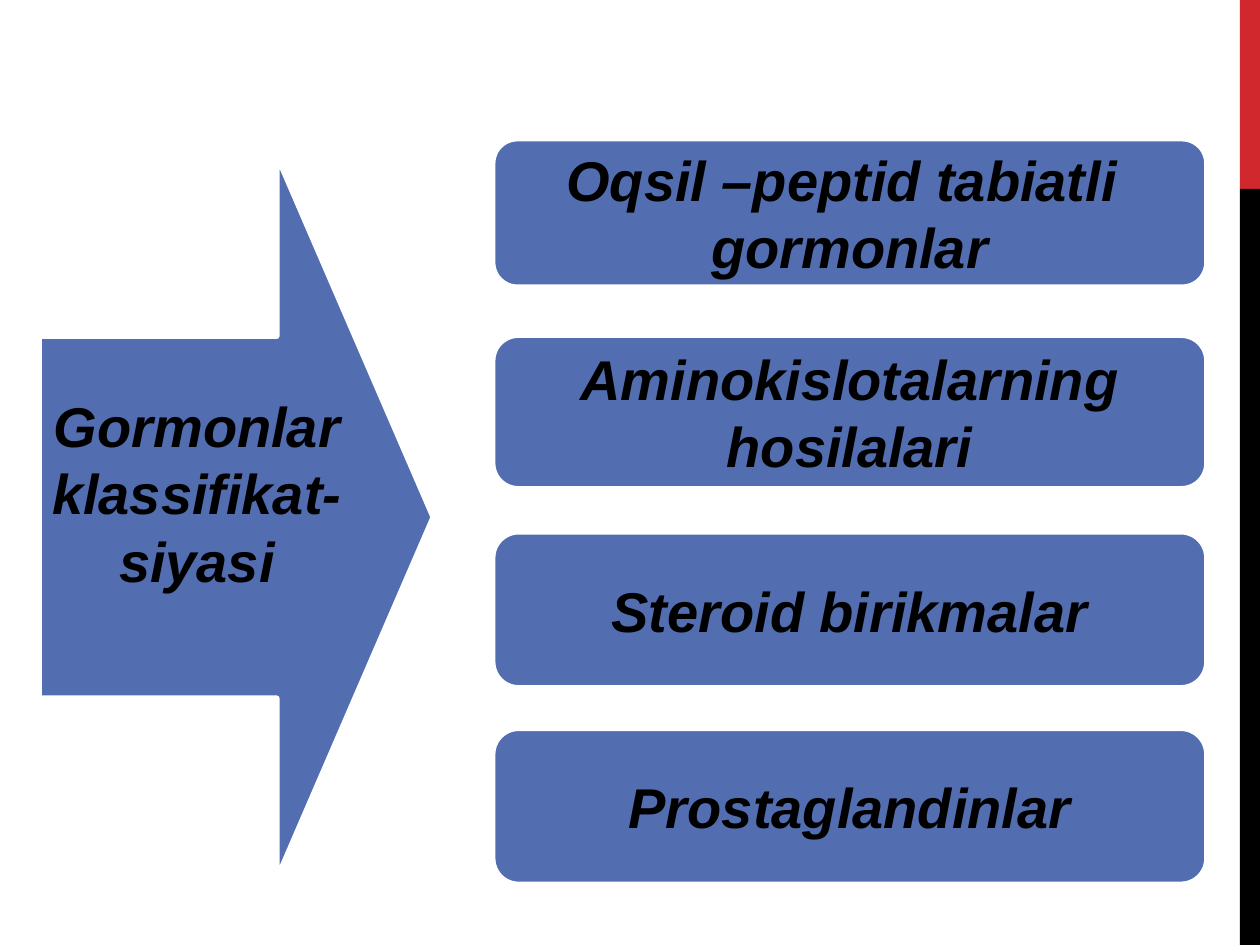
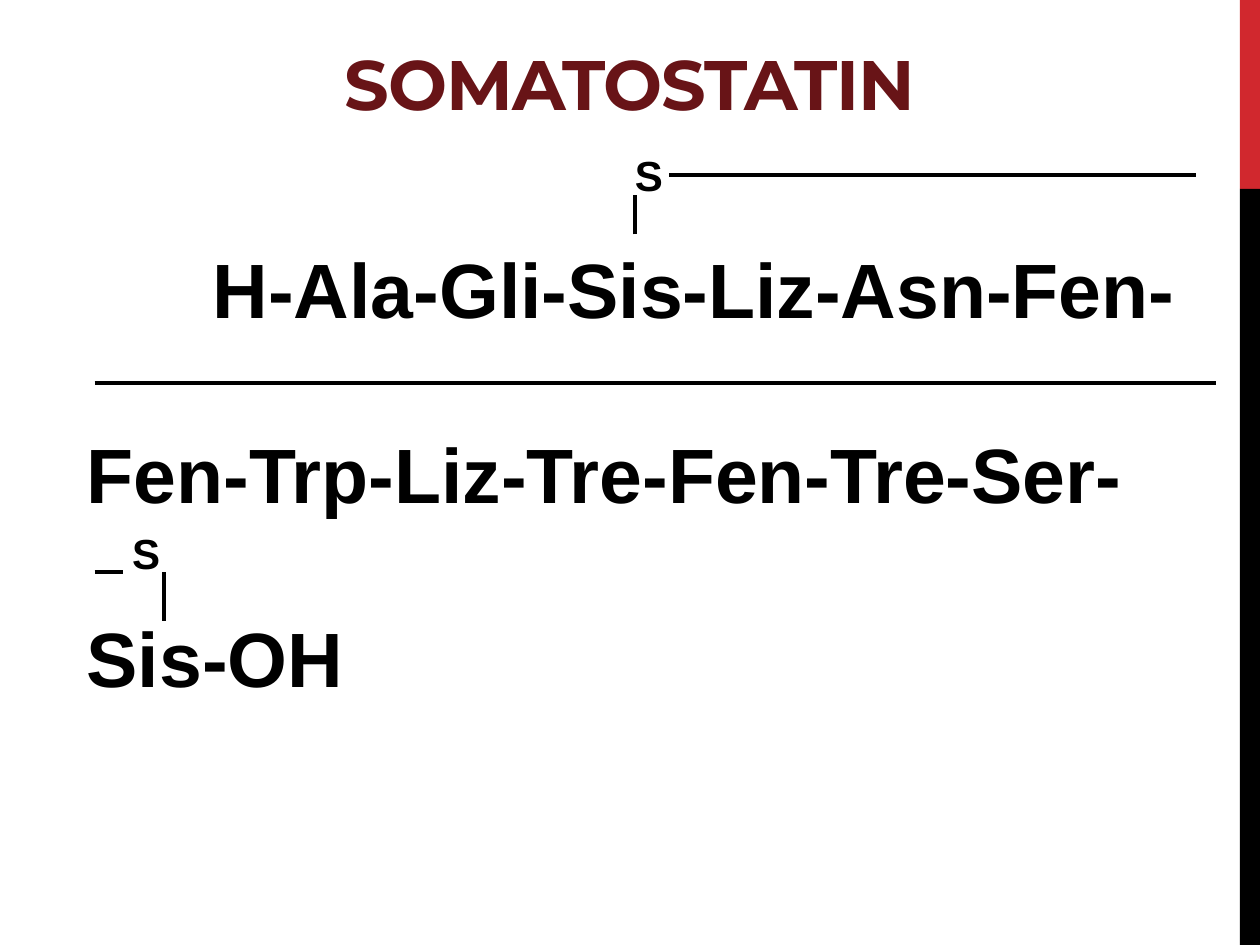
from pptx import Presentation
from pptx.dml.color import RGBColor
from pptx.enum.shapes import MSO_CONNECTOR, MSO_SHAPE
from pptx.enum.text import MSO_ANCHOR, PP_ALIGN
from pptx.oxml.ns import qn
from pptx.util import Inches, Pt
from lxml.etree import SubElement

W, H = 10, 7.5
BLACK, WHITE, RED, BLUE, MAROON = "000000", "FFFFFF", "D1282E", "526DB0", "681417"
BAND_W = 0.16

TOPIC = ["Gormonlar", "klassifikat-", "siyasi"]
CLASSES = [  # text, box height
    ("Oqsil –peptid tabiatli  gormonlar", 1.18),
    ("Aminokislotalarning hosilalari", 1.22),
    ("Steroid birikmalar", 1.24),
    ("Prostaglandinlar", 1.24),
]
CLASS_LEFT, CLASS_TOP, CLASS_W, CLASS_PITCH = 3.91, 1.1, 5.67, 1.56

TITLE = "SOMATOSTATIN"
SEQUENCE = ["H-Ala-Gli-Sis-Liz-Asn-Fen-", "Fen-Trp-Liz-Tre-Fen-Tre-Ser-", "Sis-OH"]
SULFURS = [(4.94, 1.14), (0.95, 4.14)]
BRIDGE = [  # x1, y1, x2, y2 of the disulfide bridge
    (5.04, 1.86, 5.04, 1.55),
    (5.31, 1.39, 9.49, 1.39),
    (0.75, 3.04, 9.65, 3.04),
    (0.75, 4.54, 0.98, 4.54),
    (1.3, 4.54, 1.3, 4.93),
]


def rgb(color):
    return RGBColor.from_string(color)


def inches(*lengths):
    return [Inches(n) for n in lengths]


def write(tf, lines, size, align=PP_ALIGN.LEFT, italic=False, font="Arial", color=BLACK):
    tf.text = "\n".join(lines)
    for p in tf.paragraphs:
        p.alignment = align
        for r in p.runs:
            f = r.font
            f.name, f.size, f.bold, f.italic = font, Pt(size), True, italic
            f.color.rgb = rgb(color)


def add_block(s, kind, box, fill, line=None):
    sp = s.shapes.add_shape(kind, *inches(*box))
    sp.shadow.inherit = False
    sp.fill.solid()
    sp.fill.fore_color.rgb = rgb(fill)
    if line:
        sp.line.color.rgb = rgb(line)
        sp.line.width = Pt(3.25)
    else:
        sp.line.fill.background()
    return sp


def label_block(sp, lines):
    tf = sp.text_frame
    tf.word_wrap = True
    tf.vertical_anchor = MSO_ANCHOR.MIDDLE
    tf.margin_left = tf.margin_right = Inches(0.05)
    write(tf, lines, 32, PP_ALIGN.CENTER, italic=True)


def add_text(s, box, lines, size):
    tf = s.shapes.add_textbox(*inches(*box)).text_frame
    tf.word_wrap = True
    write(tf, lines, size)
    return tf


def add_line(s, ends):
    c = s.shapes.add_connector(MSO_CONNECTOR.STRAIGHT, *inches(*ends))
    c.line.color.rgb = rgb(BLACK)
    c.line.width = Pt(2.25)
    SubElement(c.element.spPr, qn("a:effectLst"))


def add_master_bands(prs, s):
    """Draw the side bands on a slide, then move them to the master."""
    for top, height, color in [(0, H / 5, RED), (H / 5, H * 4 / 5, BLACK)]:
        band = add_block(s, MSO_SHAPE.RECTANGLE, (W - BAND_W, top, BAND_W, height), color)
        prs.slide_master.shapes.element.append(band.element)


def build_classes(s):
    arrow = add_block(s, MSO_SHAPE.RIGHT_ARROW, (0.31, 1.23, 3.13, 5.75), BLUE, WHITE)
    arrow.adjustments[1] = 0.397
    label_block(arrow, TOPIC)
    arrow.text_frame.margin_bottom = Inches(0.44)
    for i, (text, height) in enumerate(CLASSES):
        box = (CLASS_LEFT, CLASS_TOP + i * CLASS_PITCH, CLASS_W, height)
        label_block(add_block(s, MSO_SHAPE.ROUNDED_RECTANGLE, box, BLUE, WHITE), [text])


def build_somatostatin(s):
    title = s.shapes.title
    title.left, title.top, title.width, title.height = inches(0.51, 0.18, 8.98, 0.86)
    title.text_frame.vertical_anchor = MSO_ANCHOR.BOTTOM
    write(title.text_frame, [TITLE], 40, PP_ALIGN.CENTER, font="Montserrat", color=MAROON)
    title.text_frame.paragraphs[0].runs[0].font._element.set("spc", "-60")

    first, *rest = add_text(s, (0.59, 1.87, 9.06, 3.88), SEQUENCE, 44).paragraphs
    first._p.get_or_add_pPr().set("indent", str(Inches(1)))
    for p in rest:
        p.space_before = Pt(52.7)
    for ends in BRIDGE:
        add_line(s, ends)
    for left, top in SULFURS:
        add_text(s, (left, top, 0.5, 0.5), ["S"], 24)


def main():
    prs = Presentation()
    prs.slide_width, prs.slide_height = inches(W, H)
    title_only, blank = prs.slide_layouts[5], prs.slide_layouts[6]
    s = prs.slides.add_slide(blank)
    add_master_bands(prs, s)
    build_classes(s)
    build_somatostatin(prs.slides.add_slide(title_only))
    prs.save("out.pptx")


if __name__ == "__main__":
    main()
